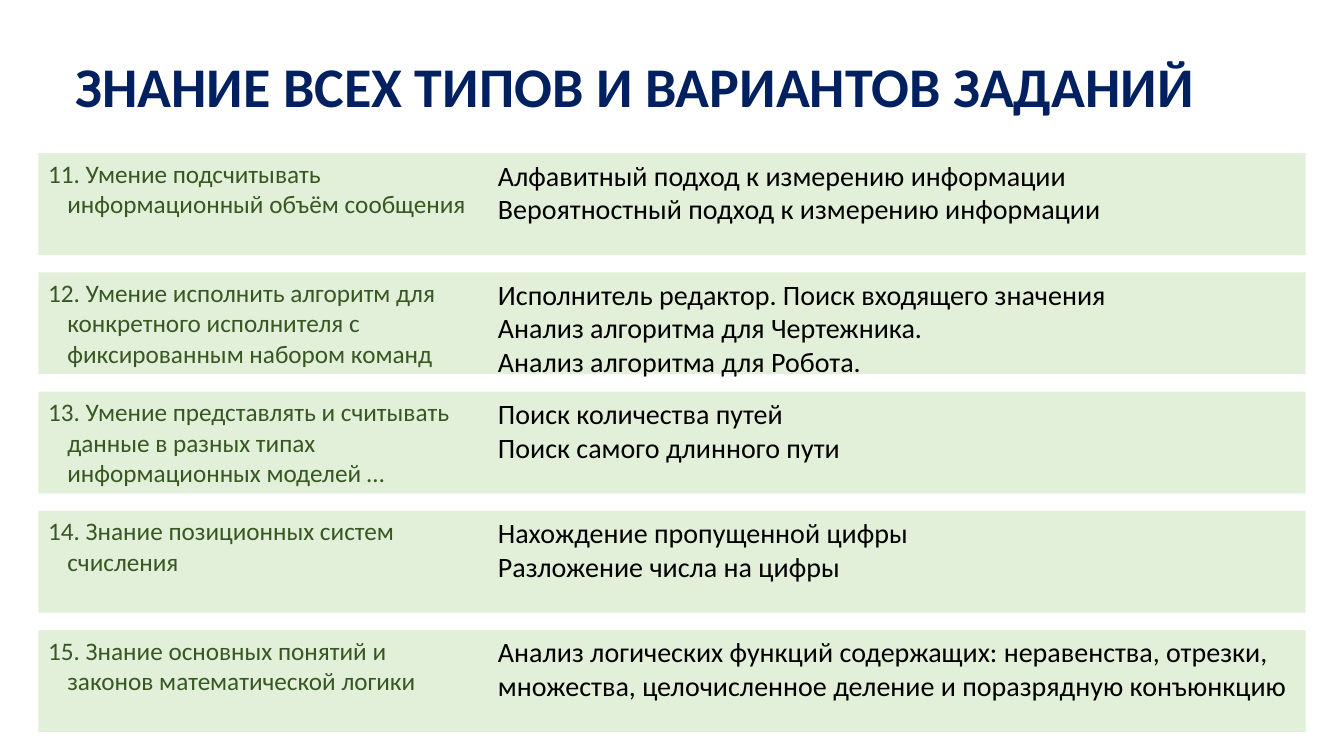
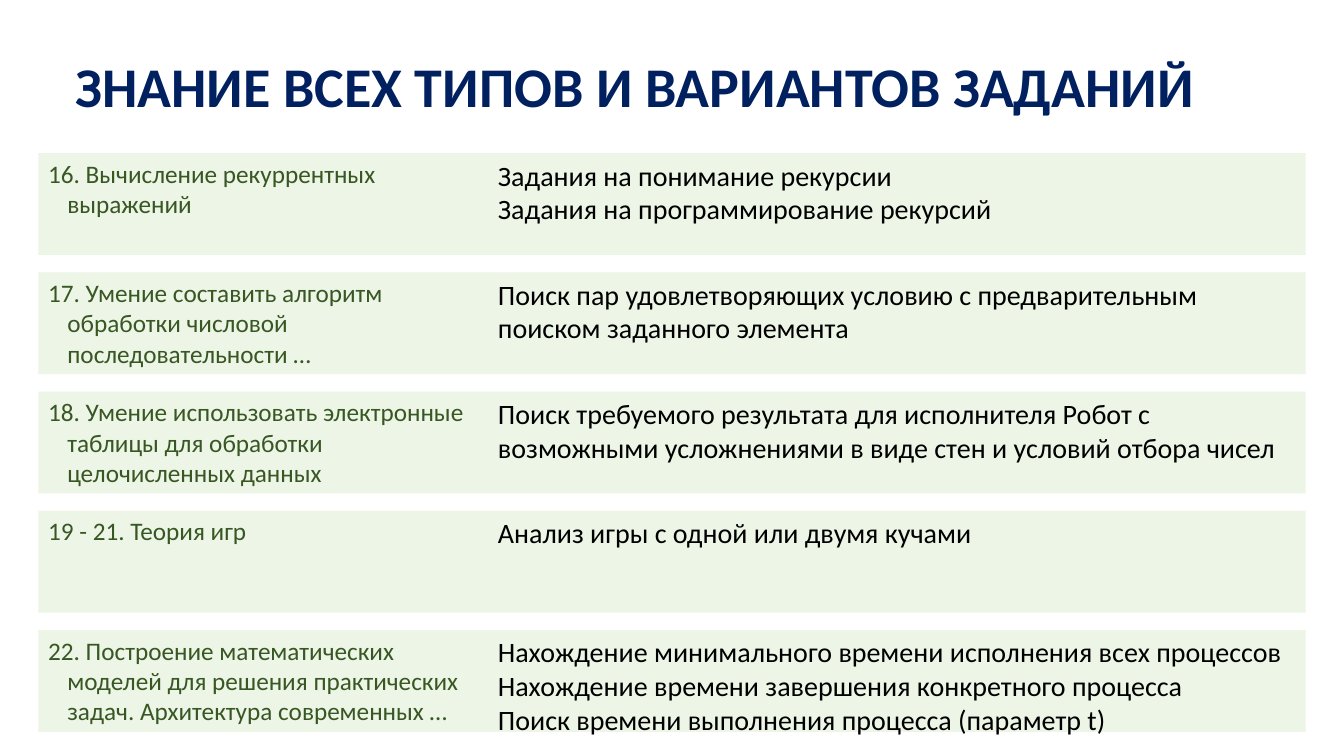
from lxml import etree
from pptx import Presentation
from pptx.dml.color import RGBColor
from pptx.enum.shapes import MSO_SHAPE
from pptx.enum.text import MSO_ANCHOR, MSO_AUTO_SIZE
from pptx.oxml.ns import qn
from pptx.util import Inches, Pt

RECTANGLE = MSO_SHAPE.RECTANGLE
TOP = MSO_ANCHOR.TOP
FIT_TEXT = MSO_AUTO_SIZE.SHAPE_TO_FIT_TEXT

FONT = "Calibri"
NAVY, DARK_GREEN, PALE_GREEN, BLACK = "002060", "385723", "E2F0D9", "000000"

TITLE = "ЗНАНИЕ ВСЕХ ТИПОВ И ВАРИАНТОВ ЗАДАНИЙ"
TITLE_BOX = (0.65, 0.46, 11.82, 0.77)
ROWS_BOX = (0.38, 1.52, 12.57, 5.74)
ROW_HEIGHT = 1.01
SKILL_WIDTH = 4.46
HANGING_INDENT = 0.19

# Each row: the skill being tested, then its task types.
PAGES = [
    (100, [
        ("11. Умение подсчитывать информационный объём сообщения",
         ["Алфавитный подход к измерению информации",
          "Вероятностный подход к измерению информации"]),
        ("12. Умение исполнить алгоритм для конкретного исполнителя "
         "с фиксированным набором команд",
         ["Исполнитель редактор. Поиск входящего значения",
          "Анализ алгоритма для Чертежника.",
          "Анализ алгоритма для Робота."]),
        ("13. Умение представлять и считывать данные в разных типах "
         "информационных моделей …",
         ["Поиск количества путей",
          "Поиск самого длинного пути"]),
        ("14. Знание позиционных систем счисления",
         ["Нахождение пропущенной цифры",
          "Разложение числа на цифры"]),
        ("15. Знание основных понятий и законов математической логики",
         ["Анализ логических функций содержащих: неравенства, отрезки, "
          "множества, целочисленное деление и поразрядную конъюнкцию"]),
    ]),
    (64, [
        ("16. Вычисление рекуррентных выражений",
         ["Задания на понимание рекурсии",
          "Задания на программирование рекурсий"]),
        ("17. Умение составить алгоритм обработки числовой последовательности …",
         ["Поиск пар удовлетворяющих условию с предварительным "
          "поиском заданного элемента"]),
        ("18. Умение использовать электронные таблицы для обработки "
         "целочисленных данных",
         ["Поиск требуемого результата для исполнителя Робот с возможными "
          "усложнениями в виде стен и условий отбора чисел"]),
        ("19 - 21. Теория игр",
         ["Анализ игры с одной или двумя кучами"]),
        ("22. Построение математических моделей для решения практических "
         "задач. Архитектура современных …",
         ["Нахождение минимального времени исполнения всех процессов",
          "Нахождение времени завершения конкретного процесса",
          "Поиск времени выполнения процесса (параметр t)"]),
    ]),
]


def color(hex_code):
    return RGBColor.from_string(hex_code)


def inches(box):
    return [Inches(length) for length in box]


def add_text(page, box, lines, size, hex_code, bold=False, hanging=0):
    """Add one paragraph per line; hanging is the indent of wrapped lines."""
    text_box = page.shapes.add_textbox(*inches(box))
    frame = text_box.text_frame
    frame.word_wrap = True
    frame.auto_size = FIT_TEXT
    frame.vertical_anchor = TOP
    frame.text = "\n".join(lines)
    for para in frame.paragraphs:
        if hanging:
            properties = para._p.get_or_add_pPr()
            properties.set("marL", str(Inches(hanging)))
            properties.set("indent", str(-Inches(hanging)))
        for span in para.runs:
            span.font.name = FONT
            span.font.size = Pt(size)
            span.font.bold = bold
            span.font.color.rgb = color(hex_code)


def add_band(page, box, opacity):
    band = page.shapes.add_shape(RECTANGLE, *inches(box))
    band.shadow.inherit = False
    band.line.fill.background()
    band.fill.solid()
    band.fill.fore_color.rgb = color(PALE_GREEN)
    if opacity < 100:
        fill_color = band._element.spPr.find(qn("a:solidFill"))[0]
        alpha = etree.SubElement(fill_color, qn("a:alpha"))
        alpha.set("val", str(opacity * 1000))


def add_row(page, box, skill, tasks, opacity):
    left, top, width, height = box
    add_band(page, box, opacity)
    add_text(page, (left, top, SKILL_WIDTH, height), [skill], 18, DARK_GREEN,
             hanging=HANGING_INDENT)
    add_text(page, (left + SKILL_WIDTH, top, width - SKILL_WIDTH, height),
             tasks, 20, BLACK)


def add_rows(page, box, rows, opacity):
    left, top, width, height = box
    pitch = (height - ROW_HEIGHT) / (len(rows) - 1)
    for index, (skill, tasks) in enumerate(rows):
        row_box = (left, top + index * pitch, width, ROW_HEIGHT)
        add_row(page, row_box, skill, tasks, opacity)


def main():
    deck = Presentation()
    deck.slide_width, deck.slide_height = Inches(13.33), Inches(7.5)
    blank = deck.slide_layouts[6]
    for opacity, rows in PAGES:
        page = deck.slides.add_slide(blank)
        add_text(page, TITLE_BOX, [TITLE], 40, NAVY, bold=True)
        add_rows(page, ROWS_BOX, rows, opacity)
    deck.save("out.pptx")


if __name__ == "__main__":
    main()
